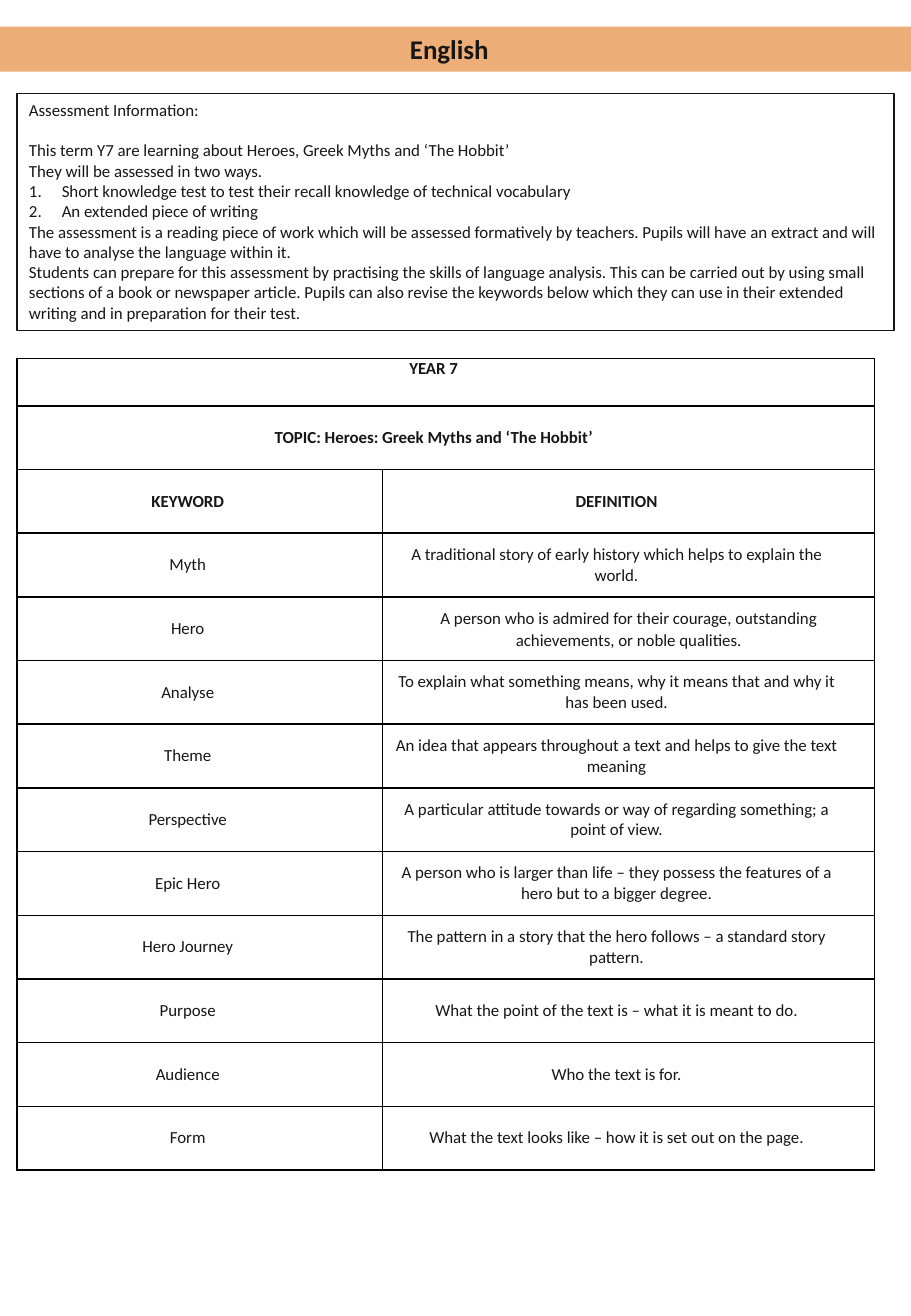
from dataclasses import dataclass

from lxml.etree import SubElement
from pptx import Presentation
from pptx.dml.color import RGBColor
from pptx.enum.shapes import MSO_SHAPE as Preset
from pptx.enum.text import MSO_ANCHOR as Anchor, PP_ALIGN as Align
from pptx.oxml.ns import qn
from pptx.util import Inches, Pt

FONT = "Calibri"
INK = "181717"
BORDER = "000000"
BANNER = "EDAF77"
LEFT = 0.14
TABLE_TOP = 2.95
TABLE_HEIGHT = 6.68
TITLE_ROW_HEIGHT = 0.39
COLUMN_WIDTHS = (3.01, 4.05)
HEADER_ROWS = 3


@dataclass
class Entry:
    keyword: str
    definition: str = ""
    right_inset: float = 0.27
    left_inset: float = 0.07
    line_spacing: float = 1.0


@dataclass
class Box:
    left: float
    top: float
    width: float
    height: float
    fill: str = ""
    line: str = ""


ASSESSMENT = (
    "Assessment Information:",
    "This term Y7 are learning about Heroes, Greek Myths and ‘The Hobbit’",
    "They will be assessed in two ways.",
    "1.\tShort knowledge test to test their recall knowledge of technical vocabulary",
    "2.\tAn extended piece of writing",
    "The assessment is a reading piece of work which will be assessed formatively by teachers. "
    "Pupils will have an extract and will have to analyse the language within it.",
    "Students can prepare for this assessment by practising the skills of language analysis. "
    "This can be carried out by using small sections of a book or newspaper article. "
    "Pupils can also revise the keywords below which they can use in their extended writing "
    "and in preparation for their test.",
)

ENTRIES = (
    Entry("YEAR 7"),
    Entry("TOPIC: Heroes: Greek Myths and ‘The Hobbit’"),
    Entry("KEYWORD", "DEFINITION"),
    Entry("Myth", "A traditional story of early history which helps to explain the world."),
    Entry("Hero", "A person who is admired for their courage, outstanding achievements, or noble qualities.",
          right_inset=0.12, left_inset=0.12, line_spacing=1.07),
    Entry("Analyse", "To explain what something means, why it means that and why it has been used."),
    Entry("Theme", "An idea that appears throughout a text and helps to give the text meaning"),
    Entry("Perspective", "A particular attitude towards or way of regarding something; a point of view."),
    Entry("Epic Hero",
          "A person who is larger than life – they possess the features of a hero but to a bigger degree."),
    Entry("Hero Journey", "The pattern in a story that the hero follows – a standard story pattern."),
    Entry("Purpose", "What the point of the text is – what it is meant to do."),
    Entry("Audience", "Who the text is for."),
    Entry("Form", "What the text looks like – how it is set out on the page."),
)


def color(value: str) -> RGBColor:
    return RGBColor.from_string(value)


def style_paragraph(paragraph, size: float, bold: bool, align) -> None:
    paragraph.alignment = align
    for run in paragraph.runs:
        run.font.name = FONT
        run.font.size = Pt(size)
        run.font.bold = bold
        run.font.color.rgb = color(INK)


def add_box(slide, box: Box):
    shape = slide.shapes.add_shape(Preset.RECTANGLE, Inches(box.left), Inches(box.top),
                                   Inches(box.width), Inches(box.height))
    shape.shadow.inherit = False
    shape.fill.background()
    shape.line.fill.background()
    if box.fill:
        shape.fill.solid()
        shape.fill.fore_color.rgb = color(box.fill)
    if box.line:
        shape.line.color.rgb = color(box.line)
        shape.line.width = Pt(0.75)
    shape.text_frame.word_wrap = True
    return shape


def add_tab_stop(paragraph, position: float) -> None:
    tabs = SubElement(paragraph._p.get_or_add_pPr(), qn("a:tabLst"))
    SubElement(tabs, qn("a:tab"), pos=str(Inches(position)), algn="l")


def add_assessment(slide) -> None:
    frame = add_box(slide, Box(LEFT, 0.77, 7.22, 1.95, line=INK)).text_frame
    frame.vertical_anchor = Anchor.TOP
    frame.text = "\n".join(ASSESSMENT)
    for paragraph in frame.paragraphs:
        if "\t" in paragraph.text:
            add_tab_stop(paragraph, 0.27)
        style_paragraph(paragraph, 10, False, Align.LEFT)
    frame.paragraphs[1].space_before = Pt(12)


def add_banner(slide) -> None:
    frame = add_box(slide, Box(0, 0.22, 7.5, 0.37, fill=BANNER)).text_frame
    frame.vertical_anchor = Anchor.MIDDLE
    frame.margin_right = Inches(0.2)
    frame.text = "English"
    style_paragraph(frame.paragraphs[0], 16, True, Align.CENTER)


def set_borders(cell) -> None:
    properties = cell._tc.get_or_add_tcPr()
    for index, side in enumerate(("a:lnL", "a:lnR", "a:lnT", "a:lnB")):
        line = properties.makeelement(qn(side), {"w": str(Pt(1))})
        fill = SubElement(line, qn("a:solidFill"))
        SubElement(fill, qn("a:srgbClr"), val=BORDER)
        properties.insert(index, line)


def fill_cell(cell, text: str, bold: bool, entry: Entry) -> None:
    cell.fill.background()
    set_borders(cell)
    cell.vertical_anchor = Anchor.MIDDLE
    cell.margin_left, cell.margin_right = Inches(entry.left_inset), Inches(entry.right_inset)
    cell.margin_top = cell.margin_bottom = 0
    cell.text_frame.text = text
    paragraph = cell.text_frame.paragraphs[0]
    paragraph.space_after = Pt(6)
    paragraph.line_spacing = entry.line_spacing
    style_paragraph(paragraph, 10, bold, Align.CENTER)


def add_keywords(slide) -> None:
    frame = slide.shapes.add_table(len(ENTRIES), len(COLUMN_WIDTHS), Inches(LEFT), Inches(TABLE_TOP),
                                   Inches(sum(COLUMN_WIDTHS)), Inches(TABLE_HEIGHT))
    table = frame.table
    table.first_row = table.horz_banding = False
    for column, width in zip(table.columns, COLUMN_WIDTHS):
        column.width = Inches(width)
    row_height = (TABLE_HEIGHT - TITLE_ROW_HEIGHT) / (len(ENTRIES) - 1)
    for index, entry in enumerate(ENTRIES):
        table.rows[index].height = Inches(row_height if index else TITLE_ROW_HEIGHT)
        bold = index < HEADER_ROWS
        keyword, definition = table.cell(index, 0), table.cell(index, 1)
        fill_cell(keyword, entry.keyword, bold, Entry(entry.keyword))
        fill_cell(definition, entry.definition, bold, entry)
        if not entry.definition:
            keyword.merge(definition)
    table.cell(0, 0).vertical_anchor = Anchor.TOP


def main() -> None:
    presentation = Presentation()
    presentation.slide_width = Inches(7.5)
    presentation.slide_height = Inches(10.83)
    slide = presentation.slides.add_slide(presentation.slide_layouts[6])
    add_assessment(slide)
    add_banner(slide)
    add_keywords(slide)
    presentation.save("out.pptx")


if __name__ == "__main__":
    main()
